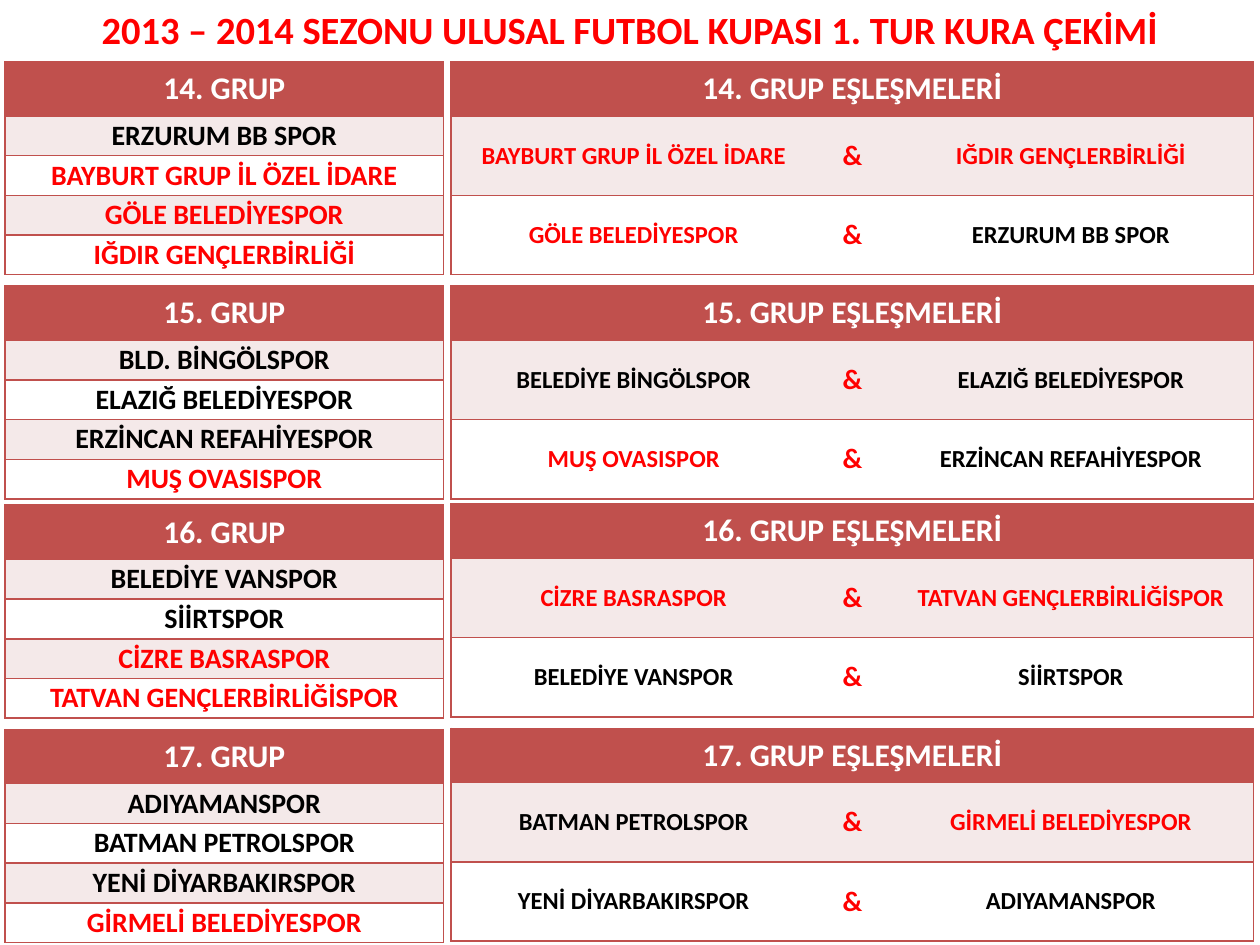
from dataclasses import dataclass

from lxml.etree import SubElement
from pptx import Presentation
from pptx.dml.color import RGBColor
from pptx.enum.text import MSO_ANCHOR as Anchor, PP_ALIGN as Align
from pptx.oxml.ns import qn
from pptx.util import Inches, Pt


@dataclass(frozen=True)
class Theme:
    font: str = "Calibri"
    accent: str = "C0504D"
    band: str = "F4E9E9"
    white: str = "FFFFFF"
    black: str = "000000"
    red: str = "FF0000"
    title: int = 22
    header: int = 18
    team: int = 16
    match: int = 14
    border: int = 1


T = Theme()

# Content: group number, tops of the two tables, teams, matches
TITLE = "2013 – 2014 SEZONU ULUSAL FUTBOL KUPASI 1. TUR KURA ÇEKİMİ"
GROUPS = [
    (14, (0.49, 0.49),
     ["ERZURUM BB SPOR", "BAYBURT GRUP İL ÖZEL İDARE",
      "GÖLE BELEDİYESPOR", "IĞDIR GENÇLERBİRLİĞİ"],
     [("BAYBURT GRUP İL ÖZEL İDARE", "IĞDIR GENÇLERBİRLİĞİ"),
      ("GÖLE BELEDİYESPOR", "ERZURUM BB SPOR")]),
    (15, (2.27, 2.27),
     ["BLD. BİNGÖLSPOR", "ELAZIĞ BELEDİYESPOR",
      "ERZİNCAN REFAHİYESPOR", "MUŞ OVASISPOR"],
     [("BELEDİYE BİNGÖLSPOR", "ELAZIĞ BELEDİYESPOR"),
      ("MUŞ OVASISPOR", "ERZİNCAN REFAHİYESPOR")]),
    (16, (4.01, 4.0),
     ["BELEDİYE VANSPOR", "SİİRTSPOR",
      "CİZRE BASRASPOR", "TATVAN GENÇLERBİRLİĞİSPOR"],
     [("CİZRE BASRASPOR", "TATVAN GENÇLERBİRLİĞİSPOR"),
      ("BELEDİYE VANSPOR", "SİİRTSPOR")]),
    (17, (5.79, 5.78),
     ["ADIYAMANSPOR", "BATMAN PETROLSPOR",
      "YENİ DİYARBAKIRSPOR", "GİRMELİ BELEDİYESPOR"],
     [("BATMAN PETROLSPOR", "GİRMELİ BELEDİYESPOR"),
      ("YENİ DİYARBAKIRSPOR", "ADIYAMANSPOR")]),
]
RED_TEXTS = {
    "&", "BAYBURT GRUP İL ÖZEL İDARE", "GÖLE BELEDİYESPOR",
    "IĞDIR GENÇLERBİRLİĞİ", "MUŞ OVASISPOR", "CİZRE BASRASPOR",
    "TATVAN GENÇLERBİRLİĞİSPOR", "GİRMELİ BELEDİYESPOR",
}

# Layout
TEAM_LEFT, TEAM_COLS = 0.04, [3.48]
MATCH_LEFT, MATCH_COLS = 3.58, [2.9, 0.57, 2.9]
HEADER_H, BODY_H = 0.43, 1.26


def write(tf, text, size, color):
    p = tf.paragraphs[0]
    p.alignment = Align.CENTER
    r = p.add_run()
    r.text = text
    r.font.name, r.font.size, r.font.bold = T.font, Pt(size), True
    r.font.color.rgb = RGBColor.from_string(color)


def set_borders(cell, sides):
    tcPr = cell._tc.get_or_add_tcPr()
    for side in "LRTB":
        ln = SubElement(tcPr, qn(f"a:ln{side}"), w=str(Pt(T.border)))
        if side in sides:
            fill = SubElement(ln, qn("a:solidFill"))
            SubElement(fill, qn("a:srgbClr"), val=T.accent)
        else:
            SubElement(ln, qn("a:noFill"))


def add_grid(slide, left, top, cols, header, rows, size, margin=None):
    """Draw a header row across all columns with banded rows below."""
    row_h = BODY_H / len(rows)
    table = slide.shapes.add_table(
        len(rows) + 1, len(cols), Inches(left), Inches(top),
        Inches(sum(cols)), Inches(HEADER_H + BODY_H)).table
    for column, width in zip(table.columns, cols):
        column.width = Inches(width)

    last = len(cols) - 1
    if last:
        table.cell(0, 0).merge(table.cell(0, last))
    for i, texts in enumerate([[header]] + rows):
        table.rows[i].height = Inches(row_h if i else HEADER_H)
        for j in range(len(cols)):
            cell = table.cell(i, j)
            set_borders(cell, "TB" + "L" * (j == 0) + "R" * (j == last))
            fill = (T.band if i % 2 else T.white) if i else T.accent
            cell.fill.solid()
            cell.fill.fore_color.rgb = RGBColor.from_string(fill)
            cell.vertical_anchor = Anchor.MIDDLE
            if margin is not None:
                cell.margin_left = cell.margin_right = Inches(margin)
                cell.margin_top = cell.margin_bottom = Inches(margin)
            if j >= len(texts):
                continue
            text = texts[j]
            if i == 0:
                write(cell.text_frame, text, size=T.header, color=T.white)
            else:
                write(cell.text_frame, text,
                      size=T.team if text == "&" else size,
                      color=T.red if text in RED_TEXTS else T.black)


def main():
    prs = Presentation()
    prs.slide_width, prs.slide_height = Inches(10), Inches(7.5)
    slide = prs.slides.add_slide(prs.slide_layouts[6])

    # Group lists on the left, their matches on the right
    for number, (team_top, match_top), teams, matches in GROUPS:
        add_grid(slide, TEAM_LEFT, team_top, TEAM_COLS, f"{number}. GRUP",
                 [[team] for team in teams], T.team, margin=0)
        add_grid(slide, MATCH_LEFT, match_top, MATCH_COLS,
                 f"{number}. GRUP EŞLEŞMELERİ",
                 [[home, "&", away] for home, away in matches], T.match)

    # Title
    tf = slide.shapes.add_textbox(0, 0, Inches(10), Inches(0.47)).text_frame
    tf.word_wrap = True
    write(tf, TITLE, size=T.title, color=T.red)

    prs.save("out.pptx")


if __name__ == "__main__":
    main()
